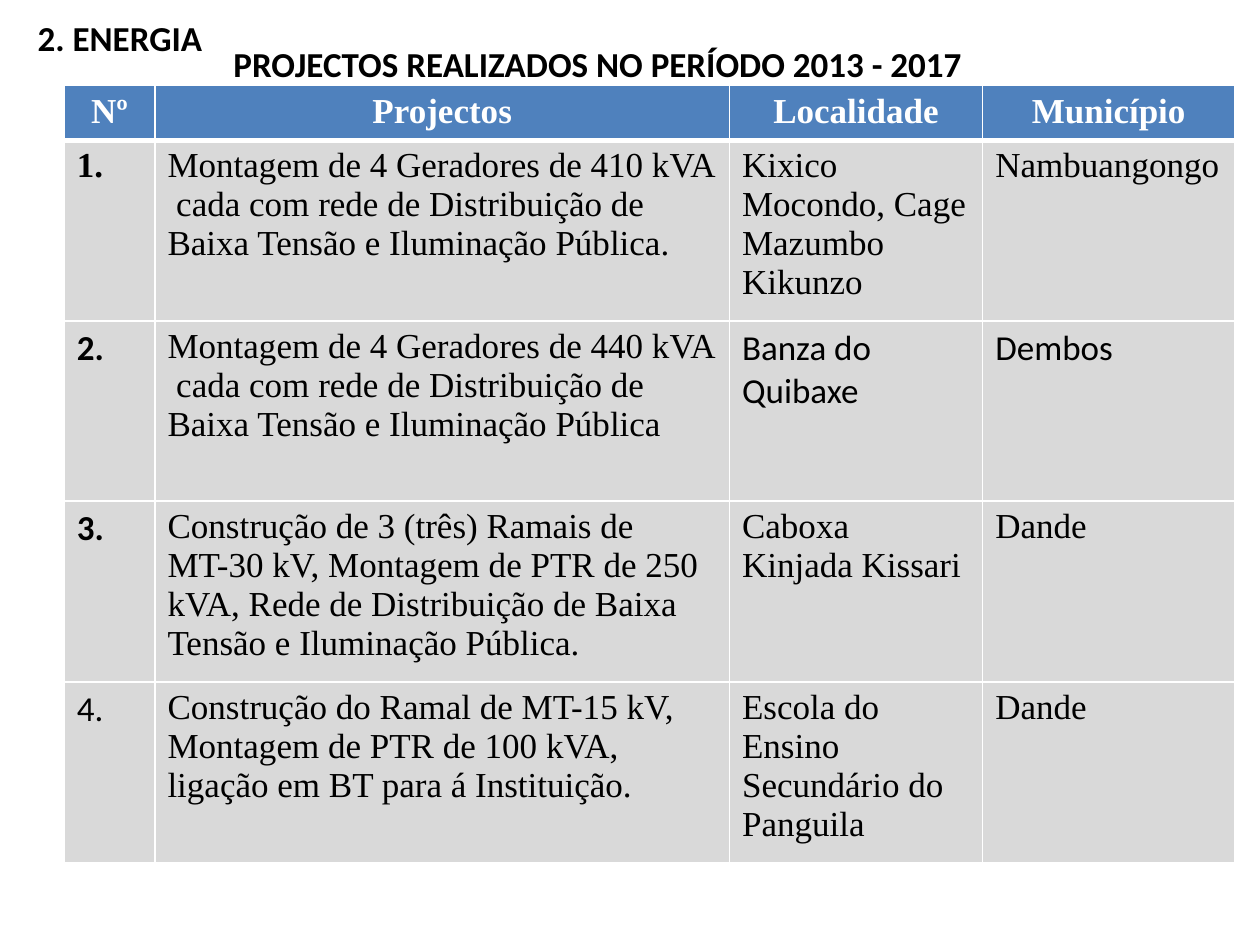
"""Build the slide listing the energy projects of 2013 to 2017."""
from dataclasses import dataclass

import pptx
import pptx.dml.color
import pptx.enum.text
import pptx.oxml
import pptx.oxml.ns
import pptx.util

Inches = pptx.util.Inches
Pt = pptx.util.Pt
ALIGN = pptx.enum.text.PP_ALIGN
SANS, SERIF = "Calibri", "Times New Roman"
WHITE, BLACK, BLUE, GREY = "FFFFFF", "000000", "4F81BD", "D9D9D9"
WIDTHS = (0.72, 4.56, 2.01, 2)
HEAD, BODY = 0.43, 1.43


@dataclass
class Title:
    text: str
    left: float
    top: float
    width: float
    align: ALIGN


@dataclass
class Item:
    text: str
    font: str = SERIF
    bold: bool = False


TITLES = (
    Title("2. ENERGIA", 0.2, 0.08, 1.58, ALIGN.LEFT),
    Title("PROJECTOS REALIZADOS NO PERÍODO 2013 - 2017", 1.73, 0.29, 6.03, ALIGN.CENTER),
)
HEADS = ("Nº", "Projectos", "Localidade", "Município")
ROWS = (
    (Item("1.", bold=True),
     Item("Montagem de 4 Geradores de 410 kVA  cada com rede de Distribuição de "
          "Baixa Tensão e Iluminação Pública."),
     Item("Kixico Mocondo, Cage Mazumbo  Kikunzo"),
     Item("Nambuangongo")),
    (Item("2.", SANS, True),
     Item("Montagem de 4 Geradores de 440 kVA  cada com rede de Distribuição de "
          "Baixa Tensão e Iluminação Pública"),
     Item("Banza do Quibaxe", SANS),
     Item("Dembos", SANS)),
    (Item("3.", SANS, True),
     Item("Construção de 3 (três) Ramais de MT-30 kV, Montagem de PTR de 250 kVA, "
          "Rede de Distribuição de Baixa Tensão e Iluminação Pública."),
     Item("Caboxa  Kinjada Kissari"),
     Item("Dande")),
    (Item("4.", SANS),
     Item("Construção do Ramal de MT-15 kV, Montagem de PTR de 100 kVA, "
          "ligação em BT para á Instituição."),
     Item("Escola do Ensino Secundário do Panguila"),
     Item("Dande")),
)


def tint(code: str) -> pptx.dml.color.RGBColor:
    return pptx.dml.color.RGBColor.from_string(code)


def write(frame, item: Item, color: str, align: ALIGN) -> None:
    para = frame.paragraphs[0]
    para.alignment = align
    run = para.add_run()
    run.text = item.text
    run.font.name = item.font
    run.font.size = Pt(20)
    run.font.bold = item.bold
    run.font.color.rgb = tint(color)


def edge(cell, side: str, width: float) -> None:
    space = pptx.oxml.ns.nsdecls("a")
    line = pptx.oxml.parse_xml(
        f'<a:ln{side} {space} w="{Pt(width)}"><a:solidFill>'
        f'<a:srgbClr val="{WHITE}"/></a:solidFill></a:ln{side}>')
    cell._tc.get_or_add_tcPr().append(line)


def paint(cell, item: Item, fill: str, color: str, align: ALIGN, top: float, base: float) -> None:
    for side, width in (("L", 1), ("R", 1), ("T", top), ("B", base)):
        edge(cell, side, width)
    cell.fill.solid()
    cell.fill.fore_color.rgb = tint(fill)
    write(cell.text_frame, item, color, align)


def label(slide, title: Title) -> None:
    box = slide.shapes.add_textbox(
        Inches(title.left), Inches(title.top), Inches(title.width), Inches(0.44))
    box.text_frame.word_wrap = False
    box.text_frame.auto_size = pptx.enum.text.MSO_AUTO_SIZE.SHAPE_TO_FIT_TEXT
    write(box.text_frame, Item(title.text, SANS, True), BLACK, title.align)


def grid(slide) -> None:
    table = slide.shapes.add_table(
        len(ROWS) + 1, len(HEADS), Inches(0.51), Inches(0.68),
        Inches(sum(WIDTHS)), Inches(HEAD + BODY * len(ROWS))).table
    for col, width in zip(table.columns, WIDTHS):
        col.width = Inches(width)
    for row in table.rows:
        row.height = Inches(BODY)
    table.rows[0].height = Inches(HEAD)
    for c, text in enumerate(HEADS):
        paint(table.cell(0, c), Item(text, bold=True), BLUE, WHITE, ALIGN.CENTER, 1, 3)
    for r, items in enumerate(ROWS, 1):
        for c, item in enumerate(items):
            paint(table.cell(r, c), item, GREY, BLACK, ALIGN.LEFT, 3 if r == 1 else 1, 1)
        props = table.cell(r, 0).text_frame.paragraphs[0]._p.get_or_add_pPr()
        props.set("marL", str(Inches(0.38)))
        props.set("indent", str(Inches(-0.38)))


def main() -> None:
    deck = pptx.Presentation()
    deck.slide_width, deck.slide_height = Inches(10), Inches(7.5)
    slide = deck.slides.add_slide(deck.slide_layouts[6])
    for title in TITLES:
        label(slide, title)
    grid(slide)
    deck.save("out.pptx")


if __name__ == "__main__":
    main()
